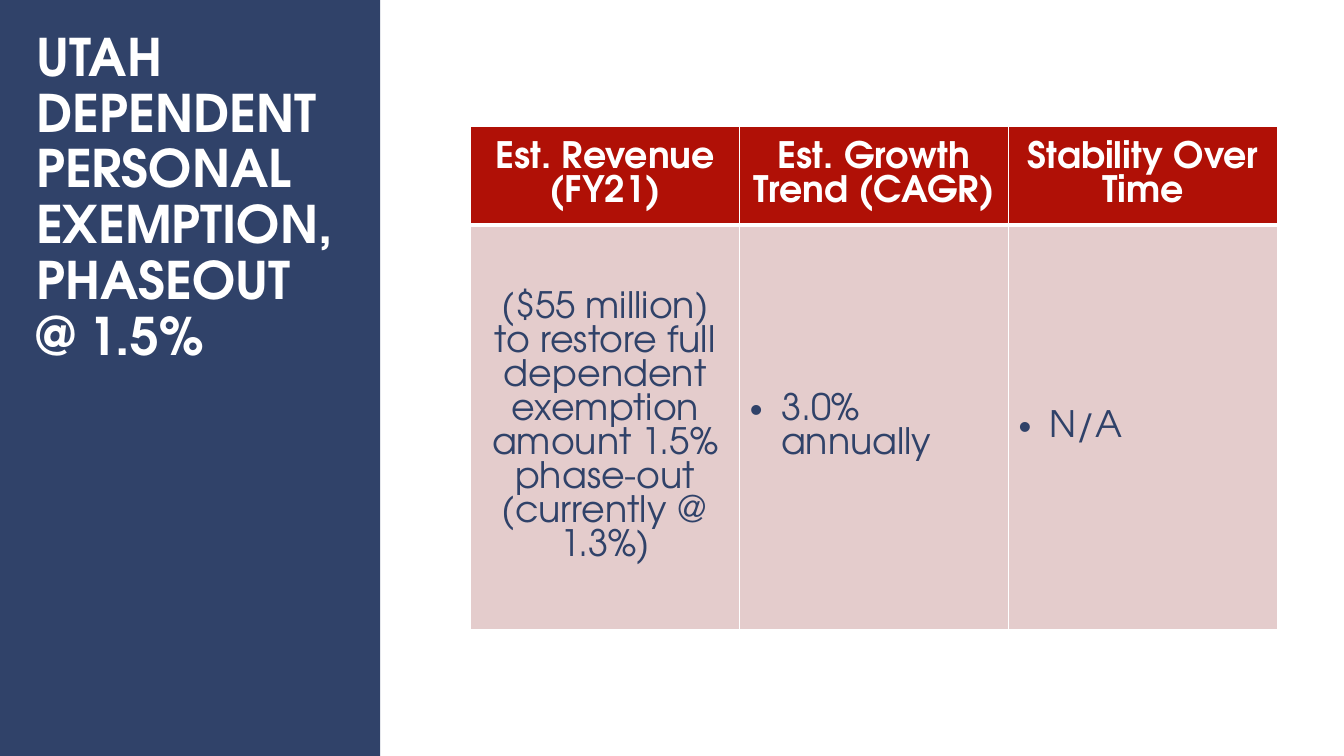
"""Build the slide on the Utah dependent personal exemption."""
from dataclasses import dataclass

from lxml.etree import SubElement
from pptx import Presentation
from pptx.dml.color import RGBColor
from pptx.enum.shapes import MSO_SHAPE
from pptx.enum.text import MSO_ANCHOR, PP_ALIGN
from pptx.oxml.ns import qn
from pptx.util import Inches, Pt


@dataclass(frozen=True)
class Theme:
    font: str = "TeX Gyre Adventor"
    navy: str = "304269"
    red: str = "B01006"
    pink: str = "E4CCCC"
    white: str = "FFFFFF"
    title_size: int = 37
    table_size: int = 26
    title_spacing: float = 0.9
    table_spacing: float = 1.0


theme = Theme()


def add_run(paragraph, text, size, color, bold, spacing):
    paragraph.line_spacing = spacing
    run = paragraph.add_run()
    run.text = text
    run.font.name = theme.font
    run.font.size = Pt(size)
    run.font.bold = bold
    run.font.color.rgb = RGBColor.from_string(color)


def add_border(cell, side, width):
    line = SubElement(cell._tc.get_or_add_tcPr(), qn(f"a:ln{side}"), w=str(Pt(width)))
    fill = SubElement(line, qn("a:solidFill"))
    SubElement(fill, qn("a:srgbClr"), val=theme.white)


presentation = Presentation()
presentation.slide_width = Inches(13.33)
presentation.slide_height = Inches(7.5)
slide = presentation.slides.add_slide(presentation.slide_layouts[6])

panel = slide.shapes.add_shape(
    MSO_SHAPE.RECTANGLE, Inches(-0.09), Inches(-0.06), Inches(3.86), Inches(7.67)
)
panel.shadow.inherit = False
panel.fill.solid()
panel.fill.fore_color.rgb = RGBColor.from_string(theme.navy)
panel.line.fill.background()

title = slide.shapes.add_textbox(Inches(0.26), Inches(0.63), Inches(3.17), Inches(2.69))
title_frame = title.text_frame
title_frame.word_wrap = True
title_frame.vertical_anchor = MSO_ANCHOR.MIDDLE
title_lines = ["UTAH DEPENDENT PERSONAL EXEMPTION,", "PHASEOUT", "@ 1.5%"]
for index, text in enumerate(title_lines):
    paragraph = title_frame.add_paragraph() if index else title_frame.paragraphs[0]
    add_run(paragraph, text, theme.title_size, theme.white, True, theme.title_spacing)

rows = [
    ["Est. Revenue (FY21)", "Est. Growth Trend (CAGR)", "Stability Over Time"],
    [
        "($55 million) to restore full dependent exemption amount 1.5% phase-out (currently @ 1.3%)",
        "3.0% annually",
        "N/A",
    ],
]
row_heights = [0.98, 4.02]
table = slide.shapes.add_table(
    len(rows), len(rows[0]), Inches(4.67), Inches(1.25), Inches(8), Inches(sum(row_heights))
).table

for row_index, texts in enumerate(rows):
    table.rows[row_index].height = Inches(row_heights[row_index])
    is_header = row_index == 0
    for column_index, text in enumerate(texts):
        cell = table.cell(row_index, column_index)
        cell.vertical_anchor = MSO_ANCHOR.MIDDLE
        for side in "LRTB":
            at_header_edge = side == ("B" if is_header else "T")
            add_border(cell, side, 3 if at_header_edge else 1)
        cell.fill.solid()
        cell.fill.fore_color.rgb = RGBColor.from_string(theme.red if is_header else theme.pink)

        paragraph = cell.text_frame.paragraphs[0]
        color = theme.white if is_header else theme.navy
        add_run(paragraph, text, theme.table_size, color, is_header, theme.table_spacing)
        if is_header or column_index == 0:
            paragraph.alignment = PP_ALIGN.CENTER
        else:
            properties = paragraph._p.get_or_add_pPr()
            properties.set("marL", str(Inches(0.31)))
            properties.set("indent", str(Inches(-0.31)))
            SubElement(properties, qn("a:buFont"), typeface="Arial")
            SubElement(properties, qn("a:buChar"), char="•")

presentation.save("out.pptx")
